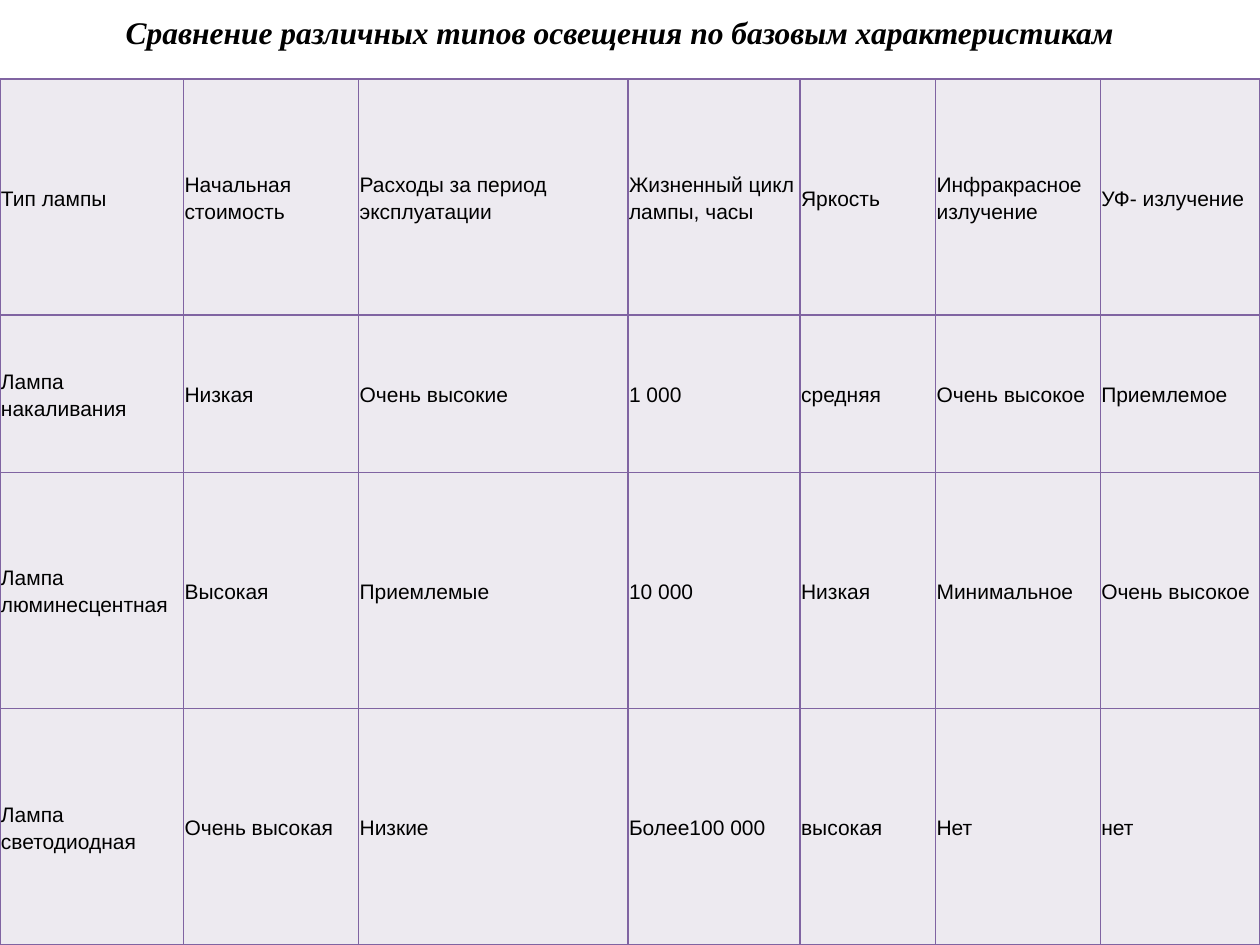
from lxml.etree import SubElement
from pptx import Presentation
from pptx.dml.color import RGBColor
from pptx.enum.text import MSO_ANCHOR, PP_ALIGN
from pptx.oxml.ns import qn
from pptx.util import Cm, Pt

TITLE = "Сравнение различных типов освещения по базовым характеристикам"
ROWS = [
    ["Тип лампы", "Начальная стоимость", "Расходы за период эксплуатации",
     "Жизненный цикл лампы, часы", "Яркость", "Инфракрасное излучение",
     "УФ- излучение"],
    ["Лампа накаливания", "Низкая", "Очень высокие", "1 000", "средняя",
     "Очень высокое", "Приемлемое"],
    ["Лампа люминесцентная", "Высокая", "Приемлемые", "10 000", "Низкая",
     "Минимальное", "Очень высокое"],
    ["Лампа светодиодная", "Очень высокая", "Низкие", "Более100 000",
     "высокая", "Нет", "нет"],
]
WIDTHS = [3.7, 3.53, 5.43, 3.47, 2.73, 3.32, 3.22]
HEIGHTS = [4.76, 3.17, 4.76, 4.76]
TOP = 1.59
BLACK, PURPLE, PALE = "000000", "8064A2", "EDEAF0"


def color(code):
    """Turn a hex string into a colour."""
    return RGBColor.from_string(code)


def style(para, face, size, bold=False, slant=False):
    """Format every run of a paragraph."""
    for run in para.runs:
        font = run.font
        font.name, font.size = face, Pt(size)
        font.bold, font.italic = bold, slant
        font.color.rgb = color(BLACK)


def add_title(slide):
    """Place and format the slide title."""
    title = slide.shapes.title
    title.left, title.top = Cm(0), Cm(0.13)
    title.width, title.height = Cm(25), Cm(1.02)
    frame = title.text_frame
    frame.text = TITLE
    frame.word_wrap = True
    frame.vertical_anchor = MSO_ANCHOR.MIDDLE
    para = frame.paragraphs[0]
    para.alignment = PP_ALIGN.CENTER
    style(para, "Times New Roman", 18, bold=True, slant=True)


def add_edges(cell):
    """Draw the four borders of a cell, ahead of its fill."""
    props = cell._tc.get_or_add_tcPr()
    for side in ("lnL", "lnR", "lnT", "lnB"):
        line = SubElement(props, qn(f"a:{side}"), w=str(Pt(1)))
        fill = SubElement(line, qn("a:solidFill"))
        SubElement(fill, qn("a:srgbClr"), val=PURPLE)


def fill_cell(cell, text):
    """Write and format one table cell."""
    add_edges(cell)
    cell.fill.solid()
    cell.fill.fore_color.rgb = color(PALE)
    cell.margin_left = cell.margin_right = Cm(0.02)
    cell.margin_top = cell.margin_bottom = Cm(0)
    cell.vertical_anchor = MSO_ANCHOR.MIDDLE
    para = cell.text_frame.paragraphs[0]
    para.text = text
    para.line_spacing = 1.15
    style(para, "Arial", 12)


def add_grid(slide):
    """Build the table that compares the lamps."""
    frame = slide.shapes.add_table(
        len(ROWS), len(WIDTHS), Cm(0), Cm(TOP), Cm(sum(WIDTHS)), Cm(sum(HEIGHTS)))
    table = frame.table
    for col, width in zip(table.columns, WIDTHS):
        col.width = Cm(width)
    for row, height, texts in zip(table.rows, HEIGHTS, ROWS):
        row.height = Cm(height)
        for cell, text in zip(row.cells, texts):
            fill_cell(cell, text)


def main():
    """Build and save the slide."""
    deck = Presentation()
    deck.slide_width, deck.slide_height = Cm(25.4), Cm(19.05)
    slide = deck.slides.add_slide(deck.slide_layouts[5])
    add_title(slide)
    add_grid(slide)
    deck.save("out.pptx")


if __name__ == "__main__":
    main()
